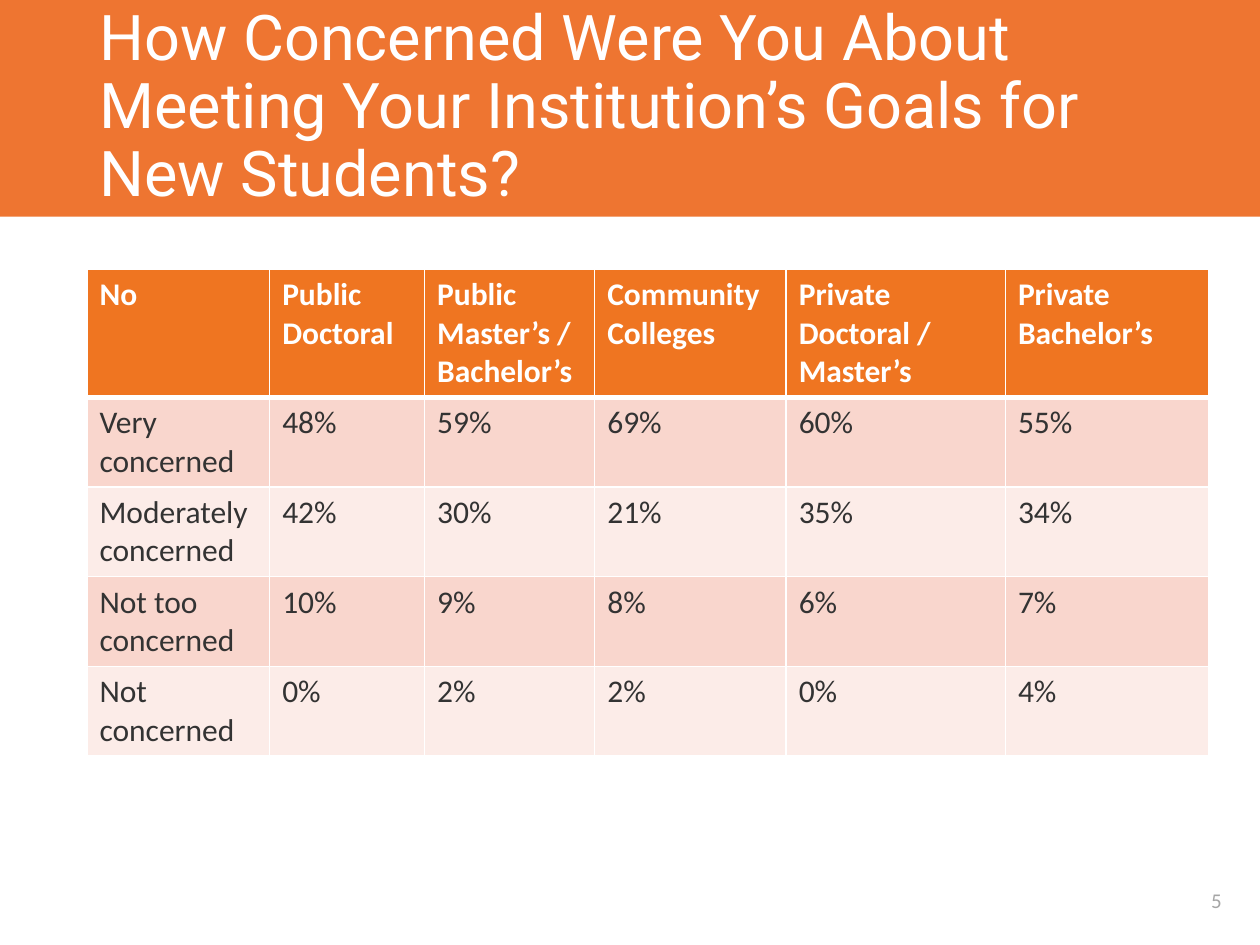
import pptx
import pptx.dml.color
import pptx.enum.shapes
import pptx.enum.text
import pptx.oxml
import pptx.oxml.ns
import pptx.util
from pptx.util import Pt

COLORS = {
    "band": "EE7531",
    "header": "EF7521",
    "odd_row": "F9D6CD",
    "even_row": "FCECE8",
    "text": "333333",
    "number": "A6A6A6",
    "white": "FFFFFF",
}


def add_run(paragraph, text, font, size, color, bold=False):
    run = paragraph.add_run()
    run.text = text
    run.font.name = font
    run.font.size = Pt(size)
    run.font.bold = bold
    run.font.color.rgb = pptx.dml.color.RGBColor.from_string(COLORS[color])


def fill_cell(cell, color, widths):
    """Set white borders of the given widths (side: points), then the fill."""
    properties = cell._tc.get_or_add_tcPr()
    for side, width in widths.items():
        properties.append(pptx.oxml.parse_xml(
            f'<a:ln{side} {pptx.oxml.ns.nsdecls("a")} w="{Pt(width)}">'
            f'<a:solidFill><a:srgbClr val="{COLORS["white"]}"/></a:solidFill>'
            f'</a:ln{side}>'))
    cell.fill.solid()
    cell.fill.fore_color.rgb = pptx.dml.color.RGBColor.from_string(COLORS[color])


presentation = pptx.Presentation()
presentation.slide_width = Pt(720)
presentation.slide_height = Pt(540)
slide = presentation.slides.add_slide(presentation.slide_layouts[5])

# Title on its orange band
title = slide.shapes.title
band = slide.shapes.add_shape(
    pptx.enum.shapes.MSO_SHAPE.RECTANGLE, Pt(-0.72), Pt(0), Pt(721.44), Pt(123.84))
band.shadow.inherit = False
band.fill.solid()
band.fill.fore_color.rgb = pptx.dml.color.RGBColor.from_string(COLORS["band"])
band.line.fill.background()
title.element.addprevious(band.element)

title.left, title.top, title.width, title.height = Pt(49.68), Pt(0), Pt(620.64), Pt(123.12)
title.text_frame.word_wrap = True
title.text_frame.auto_size = pptx.enum.text.MSO_AUTO_SIZE.NONE
title.text_frame.vertical_anchor = pptx.enum.text.MSO_ANCHOR.MIDDLE
heading = title.text_frame.paragraphs[0]
heading.alignment = pptx.enum.text.PP_ALIGN.LEFT
heading.line_spacing = 0.9
add_run(heading, "How Concerned Were You About Meeting Your Institution’s Goals for New Students?",
        "Roboto", 36, "white")

# Level of concern by type of institution
concern_rows = [
    ["No", "Public Doctoral", "Public Master’s / Bachelor’s", "Community Colleges",
     "Private Doctoral / Master’s", "Private Bachelor’s"],
    ["Very concerned", "48%", "59%", "69%", "60%", "55%"],
    ["Moderately concerned", "42%", "30%", "21%", "35%", "34%"],
    ["Not too concerned", "10%", "9%", "8%", "6%", "7%"],
    ["Not concerned", "0%", "2%", "2%", "0%", "4%"],
]
column_widths = [104.4, 88.56, 97.2, 109.44, 125.28, 115.92]
row_heights = [72] + [50.4] * 4

concerns = slide.shapes.add_table(
    len(concern_rows), len(column_widths), Pt(49.68), Pt(154.08),
    Pt(sum(column_widths)), Pt(sum(row_heights))).table
for column, width in zip(concerns.columns, column_widths):
    column.width = Pt(width)

for row_index, values in enumerate(concern_rows):
    concerns.rows[row_index].height = Pt(row_heights[row_index])
    is_header = row_index == 0
    row_fill = "header" if is_header else "odd_row" if row_index % 2 else "even_row"
    borders = {"L": 1, "R": 1, "T": 3 if row_index == 1 else 1, "B": 3 if is_header else 1}
    for column_index, value in enumerate(values):
        cell = concerns.cell(row_index, column_index)
        fill_cell(cell, row_fill, borders)
        add_run(cell.text_frame.paragraphs[0], value, "Calibri", 18,
                "white" if is_header else "text", bold=is_header)

# Slide number
page_number = slide.shapes.add_textbox(Pt(670.32), Pt(500.4), Pt(49.68), Pt(28.08)).text_frame
page_number.word_wrap = True
page_number.vertical_anchor = pptx.enum.text.MSO_ANCHOR.MIDDLE
page_number.paragraphs[0].alignment = pptx.enum.text.PP_ALIGN.CENTER
add_run(page_number.paragraphs[0], "5", "Calibri", 12, "number")

presentation.save("out.pptx")
